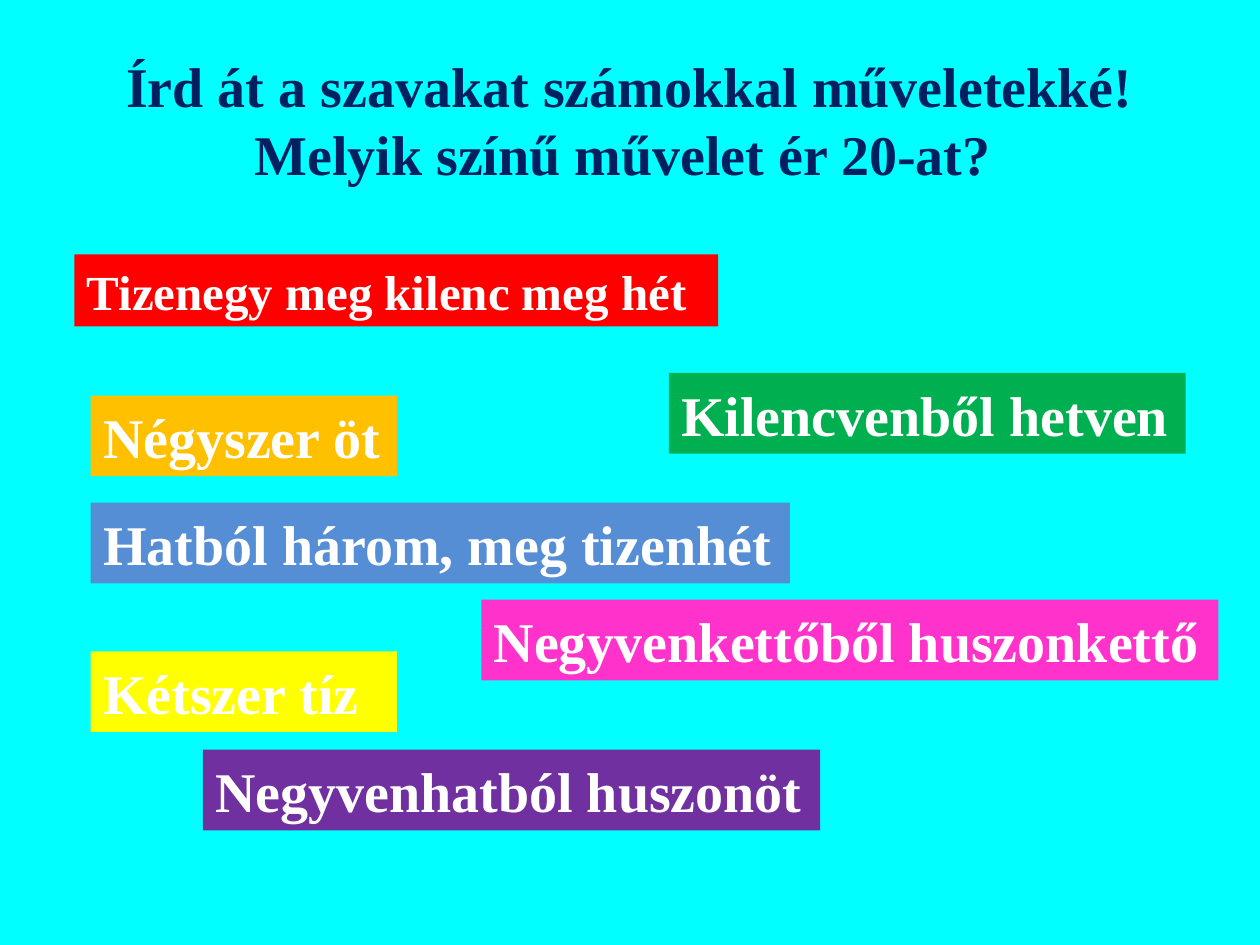
import pptx
import pptx.dml.color
import pptx.enum.shapes
import pptx.enum.text
import pptx.util

THEME = {
    "font": "Times New Roman",
    "background": "00FFFF",
    "title": "002060",
    "text": "FFFFFF",
    "title_size": 32,
    "title_leading": 38.5,
}
TITLE = "Írd át a szavakat számokkal műveletekké!\vMelyik színű művelet ér 20-at? "
TITLE_BOX = (0.5, 0.32, 9, 1.25)

MARGIN = 0.72
SHORT = 2.43
HEIGHTS = {28: 0.57, 32: 0.64}
# text, fill, type size, left, top, width
CARDS = [
    ("Tizenegy meg kilenc meg hét", "FF0000", 28, 0.59, 2.02, 5.11),
    ("Négyszer öt", "FFC000", 32, MARGIN, 3.14, SHORT),
    ("Hatból három, meg tizenhét", "558ED5", 32, MARGIN, 3.99, 5.55),
    ("Kétszer tíz", "FFFF00", 32, MARGIN, 5.17, SHORT),
    ("Negyvenhatból huszonöt", "7030A0", 32, 1.61, 5.95, 4.9),
    ("Kilencvenből hetven", "00B050", 32, 5.31, 2.96, 4.1),
    ("Negyvenkettőből huszonkettő", "FF33CC", 32, 3.82, 4.76, 5.85),
]


def rgb(value):
    return pptx.dml.color.RGBColor.from_string(value)


def write(sp, text, size, color, align, anchor):
    tf = sp.text_frame
    tf.word_wrap = True
    tf.vertical_anchor = anchor
    tf.text = text
    p = tf.paragraphs[0]
    p.alignment = align
    for r in p.runs:
        r.font.name = THEME["font"]
        r.font.size = pptx.util.Pt(size)
        r.font.bold = True
        r.font.color.rgb = rgb(color)
    return p


def add_title(s):
    sp = s.shapes.add_textbox(*map(pptx.util.Inches, TITLE_BOX))
    p = write(sp, TITLE, THEME["title_size"], THEME["title"],
              pptx.enum.text.PP_ALIGN.CENTER, pptx.enum.text.MSO_ANCHOR.MIDDLE)
    p.line_spacing = pptx.util.Pt(THEME["title_leading"])


def add_card(s, text, fill, size, left, top, width):
    box = map(pptx.util.Inches, (left, top, width, HEIGHTS[size]))
    sp = s.shapes.add_shape(pptx.enum.shapes.MSO_SHAPE.RECTANGLE, *box)
    sp.shadow.inherit = False
    sp.fill.solid()
    sp.fill.fore_color.rgb = rgb(fill)
    sp.line.fill.background()
    write(sp, text, size, THEME["text"],
          pptx.enum.text.PP_ALIGN.LEFT, pptx.enum.text.MSO_ANCHOR.BOTTOM)


def main():
    prs = pptx.Presentation()
    prs.slide_width = pptx.util.Inches(10)
    prs.slide_height = pptx.util.Inches(7.5)
    s = prs.slides.add_slide(prs.slide_layouts[6])
    s.background.fill.solid()
    s.background.fill.fore_color.rgb = rgb(THEME["background"])
    add_title(s)
    for card in CARDS:
        add_card(s, *card)
    prs.save("out.pptx")


if __name__ == "__main__":
    main()
